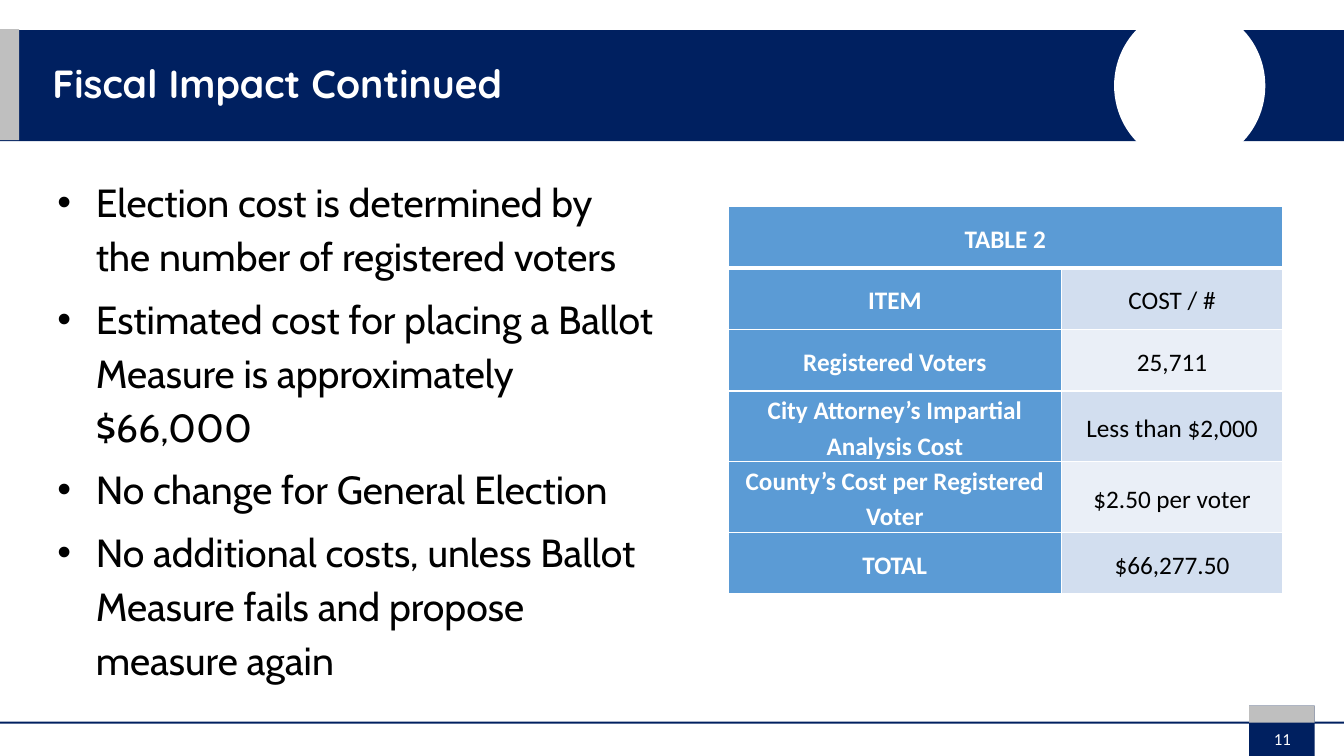
from lxml import etree
from pptx import Presentation
from pptx.dml.color import RGBColor
from pptx.enum.shapes import MSO_SHAPE as SHAPE
from pptx.enum.text import MSO_ANCHOR as ANCHOR, MSO_AUTO_SIZE as AUTO, PP_ALIGN as ALIGN
from pptx.oxml.ns import qn
from pptx.util import Inches, Pt

COLORS = {
    "navy": "002060", "grey": "BFBFBF", "white": "FFFFFF", "black": "000000",
    "blue": "5B9BD5", "band_dark": "D2DEEF", "band_light": "EAEFF7",
}


def rgb(name):
    return RGBColor.from_string(COLORS[name])


def write(p, text, font, size, color, bold=False, align=ALIGN.LEFT, spacing=1.0, after=0):
    """Fill paragraph p with one formatted run."""
    p.alignment, p.line_spacing = align, spacing
    p.space_before, p.space_after = Pt(0), Pt(after)
    r = p.add_run()
    r.text = text
    r.font.name, r.font.size, r.font.bold = font, Pt(size), bold
    r.font.color.rgb = rgb(color)


prs = Presentation()
prs.slide_width, prs.slide_height = Inches(13.33), Inches(7.5)
s = prs.slides.add_slide(prs.slide_layouts[1])

# Header band, footer rule and page number block
for shape, color, *box in [
    (SHAPE.RECTANGLE, "navy", 0, 0.3, 13.33, 1.1),
    (SHAPE.OVAL, "white", 11.05, 0.07, 1.5, 1.56),
    (SHAPE.RECTANGLE, "grey", 0, 0.29, 0.19, 1.1),
    (SHAPE.RECTANGLE, "navy", 0, 7.16, 13.33, 0.02),
    (SHAPE.RECTANGLE, "navy", 12.39, 7, 0.65, 0.5),
    (SHAPE.RECTANGLE, "grey", 12.39, 7, 0.65, 0.17),
]:
    sp = s.shapes.add_shape(shape, *map(Inches, box))
    sp.shadow.inherit = False
    sp.fill.solid()
    sp.fill.fore_color.rgb = rgb(color)
    sp.line.fill.background()

number = s.shapes.add_textbox(Inches(12.27), Inches(7.13), Inches(0.9), Inches(0.4))
tf = number.text_frame
tf.word_wrap, tf.vertical_anchor = True, ANCHOR.MIDDLE
write(tf.paragraphs[0], "11", "Calibri", 12, "white", align=ALIGN.CENTER)

# Title and bullets, brought in front of the band
title, body = s.shapes.title, s.placeholders[1]
for sp, box in [(body, (0.47, 1.65, 6.11, 4.66)), (title, (0.42, 0.4, 10.43, 0.91))]:
    sp.left, sp.top, sp.width, sp.height = map(Inches, box)
    s.shapes._spTree.append(sp._element)

tf = title.text_frame
tf.vertical_anchor, tf.auto_size = ANCHOR.MIDDLE, AUTO.NONE
write(tf.paragraphs[0], "Fiscal Impact Continued", "Quicksand", 28, "white", bold=True, spacing=0.9)

bullets = [
    "Election cost is determined by the number of registered voters",
    "Estimated cost for placing a Ballot Measure is approximately $66,000",
    "No change for General Election",
    "No additional costs, unless Ballot Measure fails and propose measure again",
]
tf = body.text_frame
tf.word_wrap, tf.auto_size, tf.vertical_anchor = True, AUTO.SHAPE_TO_FIT_TEXT, ANCHOR.TOP
for i, text in enumerate(bullets):
    p = tf.add_paragraph() if i else tf.paragraphs[0]
    pPr = p._p.get_or_add_pPr()
    pPr.set("marL", str(Inches(0.38)))
    pPr.set("indent", str(Inches(-0.38)))
    etree.SubElement(pPr, qn("a:buFont")).set("typeface", "Arial")
    etree.SubElement(pPr, qn("a:buChar")).set("char", "•")
    write(p, text, "Cabin", 28, "black", spacing=1.15, after=6)

# Cost table
rows = [
    ("TABLE 2", ""),
    ("ITEM", "COST / #"),
    ("Registered Voters", "25,711"),
    ("City Attorney’s Impartial Analysis Cost", "Less than $2,000"),
    ("County’s Cost per Registered Voter", "$2.50 per voter"),
    ("TOTAL", "$66,277.50"),
]
ROW_HEIGHT = 0.61
table = s.shapes.add_table(len(rows), 2, Inches(7.22), Inches(2.05),
                           Inches(5.5), Inches(ROW_HEIGHT * len(rows))).table
for column, width in zip(table.columns, (3.31, 2.19)):
    column.width = Inches(width)
table.cell(0, 0).merge(table.cell(0, 1))

for i, row in enumerate(rows):
    table.rows[i].height = Inches(ROW_HEIGHT)
    for j, text in enumerate(row):
        cell = table.cell(i, j)
        heading = i == 0 or j == 0
        cell.vertical_anchor = ANCHOR.MIDDLE
        cell.margin_left = cell.margin_right = Inches(0.07)
        cell.margin_top = cell.margin_bottom = 0
        tcPr = cell._tc.get_or_add_tcPr()
        for side in "LRTB":
            thick = (i, side) in [(0, "B"), (1, "T")]
            ln = etree.SubElement(tcPr, qn(f"a:ln{side}"), w=str(Pt(3 if thick else 1)))
            line_fill = etree.SubElement(ln, qn("a:solidFill"))
            etree.SubElement(line_fill, qn("a:srgbClr")).set("val", COLORS["white"])
        cell.fill.solid()
        band = "band_dark" if i % 2 else "band_light"
        cell.fill.fore_color.rgb = rgb("blue" if heading else band)
        if text:
            write(cell.text_frame.paragraphs[0], text, "Calibri", 18,
                  "white" if heading else "black", bold=heading,
                  align=ALIGN.CENTER, spacing=1.15)

# An even band for the last row, as its row index is odd
prs.save("out.pptx")
